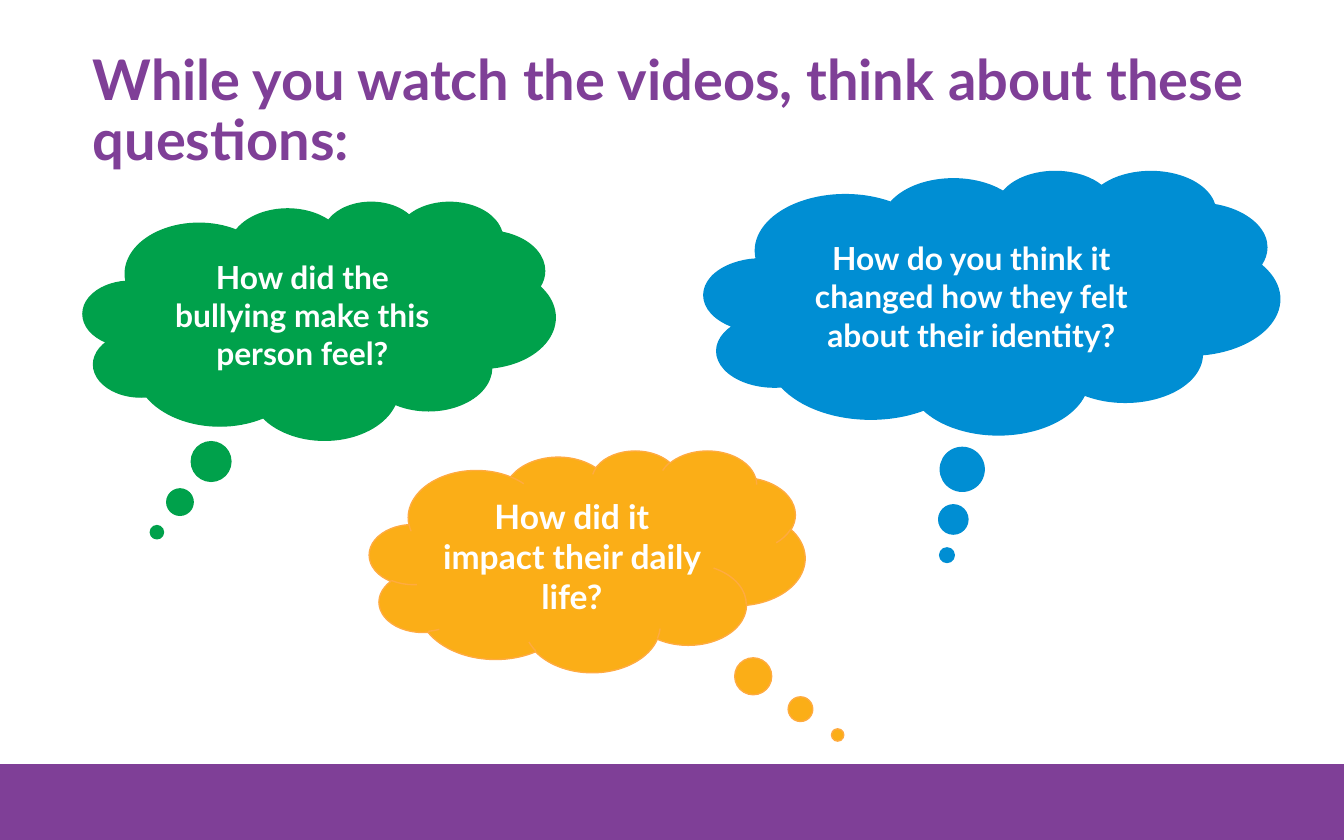
from dataclasses import dataclass

from pptx import Presentation
from pptx.dml.color import RGBColor
from pptx.enum.shapes import MSO_SHAPE as Preset
from pptx.enum.text import MSO_ANCHOR as Anchor, MSO_AUTO_SIZE as AutoSize, PP_ALIGN as Align
from pptx.slide import Slide
from pptx.text.text import TextFrame
from pptx.util import Inches, Pt


@dataclass(frozen=True)
class Theme:
    font: str = "Lato"
    purple: str = "7F3F97"
    green: str = "00A14B"
    amber: str = "FBAE17"
    amber_edge: str = "FFAB40"
    blue: str = "008ED3"
    white: str = "FFFFFF"
    title_size: int = 30
    question_size: int = 17
    short_question_size: int = 18
    edge_width: float = 0.75


@dataclass(frozen=True)
class Box:
    left: float
    top: float
    width: float
    height: float

    def lengths(self) -> tuple[Inches, Inches, Inches, Inches]:
        return Inches(self.left), Inches(self.top), Inches(self.width), Inches(self.height)


@dataclass(frozen=True)
class Thought:
    question: str
    box: Box
    tail: tuple[float, float]
    fill: str
    edge: str
    size: int


THEME = Theme()
TITLE = "While you watch the videos, think about these questions:"
TITLE_BOX = Box(0.62, 0.4, 8.72, 0.87)
FOOTER_BOX = Box(0, 5.69, 10, 0.56)
THOUGHTS = (
    Thought("How did the bullying make this person feel?", Box(0.62, 1.5, 3.51, 1.77),
            (-0.344, 0.89), THEME.green, THEME.green, THEME.question_size),
    Thought("How did it impact their daily life?", Box(2.75, 3.35, 3.24, 1.65),
            (0.575, 0.784), THEME.amber, THEME.amber_edge, THEME.short_question_size),
    Thought("How do you think it changed how they felt about their identity?",
            Box(5.24, 1.27, 4.28, 1.96),
            (-0.078, 0.96), THEME.blue, THEME.blue, THEME.question_size),
)


def write(frame: TextFrame, words: str, size: int, color: str, align: Align,
          inset: float, spacing: float) -> None:
    frame.word_wrap = True
    frame.auto_size = AutoSize.NONE
    frame.vertical_anchor = Anchor.MIDDLE
    frame.margin_left = frame.margin_right = Inches(inset)
    frame.margin_top = frame.margin_bottom = Inches(inset)
    paragraph = frame.paragraphs[0]
    paragraph.alignment = align
    paragraph.line_spacing = spacing
    paragraph.space_before = Pt(0)
    run = paragraph.add_run()
    run.text = words
    run.font.name = THEME.font
    run.font.size = Pt(size)
    run.font.bold = True
    run.font.color.rgb = RGBColor.from_string(color)


def add_filled(slide: Slide, preset: Preset, box: Box, fill: str, edge: str):
    shape = slide.shapes.add_shape(preset, *box.lengths())
    shape.shadow.inherit = False
    shape.fill.solid()
    shape.fill.fore_color.rgb = RGBColor.from_string(fill)
    shape.line.color.rgb = RGBColor.from_string(edge)
    shape.line.width = Pt(THEME.edge_width)
    return shape


def add_thought(slide: Slide, thought: Thought) -> None:
    cloud = add_filled(slide, Preset.CLOUD_CALLOUT, thought.box, thought.fill, thought.edge)
    for index, offset in enumerate(thought.tail):
        cloud.adjustments[index] = offset
    write(cloud.text_frame, thought.question, thought.size, THEME.white, Align.CENTER, 0.1, 1.0)


def add_title(slide: Slide) -> None:
    title = slide.shapes.title
    title.left, title.top, title.width, title.height = TITLE_BOX.lengths()
    write(title.text_frame, TITLE, THEME.title_size, THEME.purple, Align.LEFT, 0.07, 0.9)


def main() -> None:
    deck = Presentation()
    deck.slide_width, deck.slide_height = Inches(10), Inches(6.25)
    slide = deck.slides.add_slide(deck.slide_layouts[5])
    add_filled(slide, Preset.RECTANGLE, FOOTER_BOX, THEME.purple, THEME.purple)
    for thought in THOUGHTS:
        add_thought(slide, thought)
    add_title(slide)
    deck.save("out.pptx")


if __name__ == "__main__":
    main()
